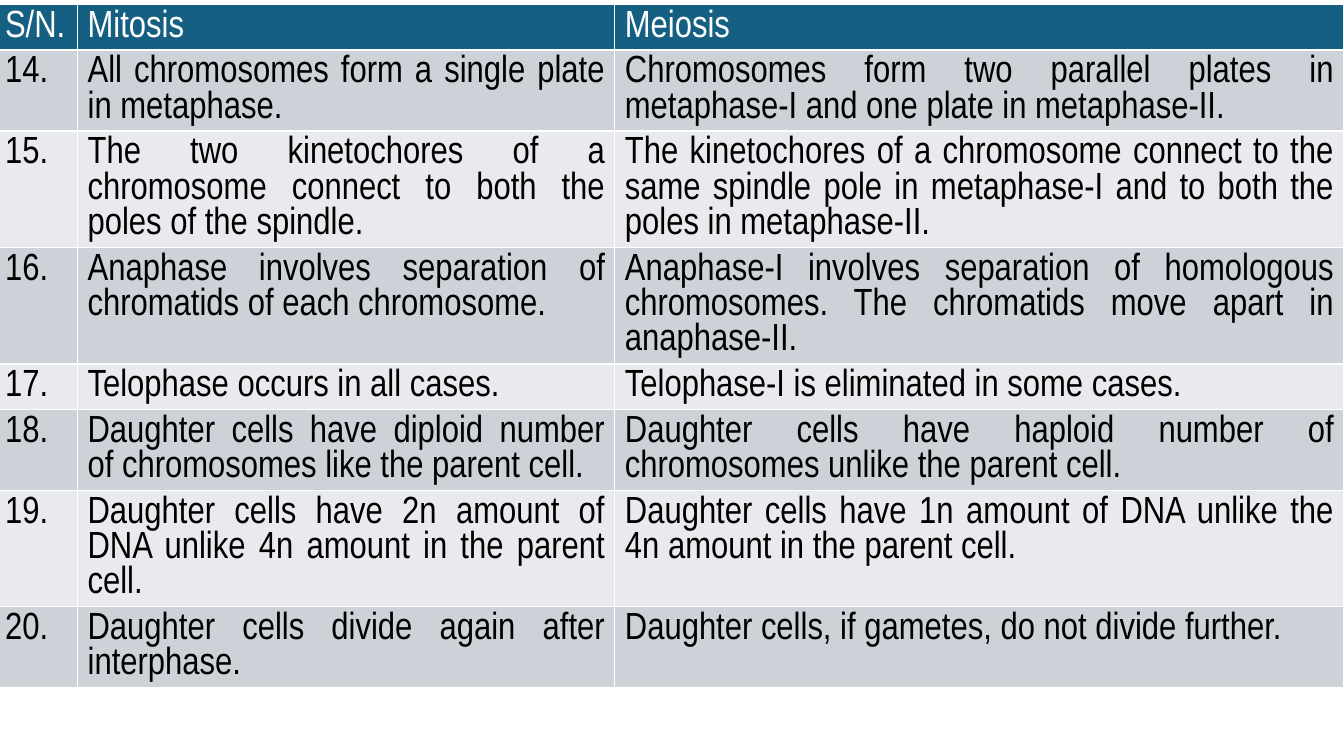
import pptx
import pptx.dml.color
import pptx.enum.text
import pptx.util

Pt = pptx.util.Pt

COLOURS = {
    "header": "156082",
    "odd_band": "CCD2D8",
    "even_band": "E8EAED",
    "header_text": "FFFFFF",
    "body_text": "000000",
}
FIRST_NUMBER = 14
ROW_HEIGHT = 29.5
COLUMN_WIDTHS = [59, 383.8, 520.6]

differences = [
    ("All chromosomes form a single plate in metaphase.",
     "Chromosomes form two parallel plates in metaphase-I and one plate in metaphase-II."),
    ("The two kinetochores of a chromosome connect to both the poles of the spindle.",
     "The kinetochores of a chromosome connect to the same spindle pole in metaphase-I "
     "and to both the poles in metaphase-II."),
    ("Anaphase involves separation of chromatids of each chromosome.",
     "Anaphase-I involves separation of homologous chromosomes. "
     "The chromatids move apart in anaphase-II."),
    ("Telophase occurs in all cases.",
     "Telophase-I is eliminated in some cases."),
    ("Daughter cells have diploid number of chromosomes like the parent cell.",
     "Daughter cells have haploid number of chromosomes unlike the parent cell."),
    ("Daughter cells have 2n amount of DNA unlike 4n amount in the parent cell.",
     "Daughter cells have 1n amount of DNA unlike the 4n amount in the parent cell."),
    ("Daughter cells divide again after interphase.",
     "Daughter cells, if gametes, do not divide further."),
]
comparison = [("S/N.", "Mitosis", "Meiosis")]
for number, (mitosis, meiosis) in enumerate(differences, FIRST_NUMBER):
    comparison.append((f"{number}.", mitosis, meiosis))

# Slide
deck = pptx.Presentation()
deck.slide_width, deck.slide_height = Pt(960), Pt(540)
slide = deck.slides.add_slide(deck.slide_layouts[6])

# Table grid; rows grow to fit their text
table = slide.shapes.add_table(
    len(comparison), len(COLUMN_WIDTHS), Pt(-3.6), Pt(3.2),
    Pt(sum(COLUMN_WIDTHS)), Pt(ROW_HEIGHT * len(comparison))).table
for column, width in zip(table.columns, COLUMN_WIDTHS):
    column.width = Pt(width)

# Cells: a header row above alternating bands
for row_index, entries in enumerate(comparison):
    if row_index == 0:
        band, ink = "header", "header_text"
    else:
        band, ink = ("odd_band" if row_index % 2 else "even_band"), "body_text"
    table.rows[row_index].height = Pt(ROW_HEIGHT)
    for column_index, entry in enumerate(entries):
        cell = table.cell(row_index, column_index)
        cell.fill.solid()
        cell.fill.fore_color.rgb = pptx.dml.color.RGBColor.from_string(COLOURS[band])
        paragraph = cell.text_frame.paragraphs[0]
        paragraph.text = entry
        paragraph.alignment = pptx.enum.text.PP_ALIGN.JUSTIFY
        font = paragraph.runs[0].font
        font.name = "Arial Narrow"
        font.size = Pt(27)
        font.bold = False
        font.color.rgb = pptx.dml.color.RGBColor.from_string(COLOURS[ink])

deck.save("out.pptx")
